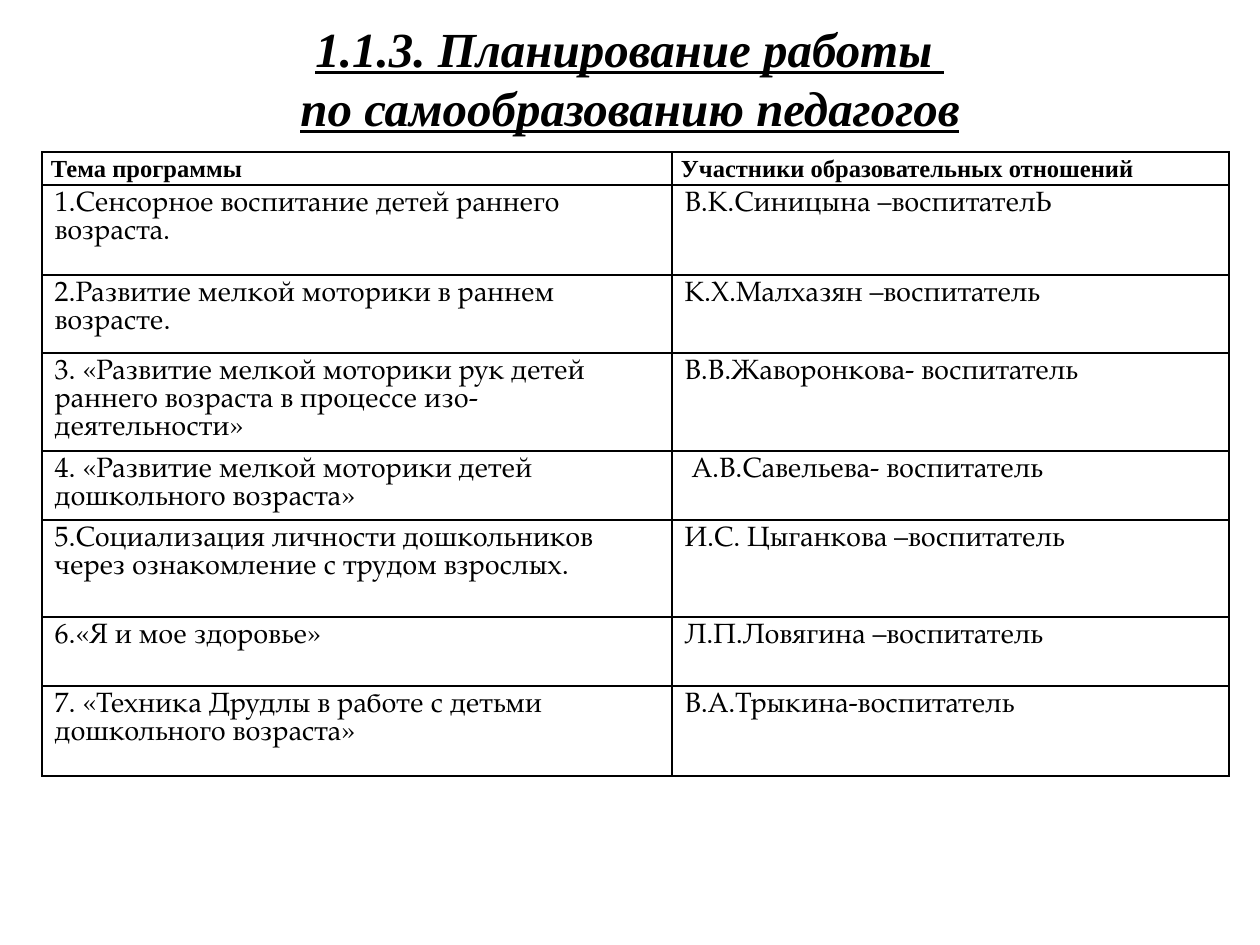
"""Build a slide listing the self-education topics of the teachers."""
from dataclasses import dataclass

import pptx
import pptx.dml.color
import pptx.enum.text
import pptx.oxml.ns
import pptx.oxml.xmlchemy
import pptx.util
from lxml import etree

PIXELS_PER_INCH = 126
BLACK = pptx.dml.color.RGBColor(0, 0, 0)
COLUMN_WIDTHS = (630, 557)
BORDER_TAGS = ("a:lnL", "a:lnR", "a:lnT", "a:lnB")

TITLE_FORMAT = {"name": "Times New Roman", "size": pptx.util.Pt(28),
                "bold": True, "italic": True, "underline": True}
HEADER_FORMAT = {"name": "Times New Roman", "size": pptx.util.Pt(14), "bold": True}
BODY_FORMAT = {"name": "TeX Gyre Pagella", "size": pptx.util.Pt(16), "bold": False}


@dataclass(frozen=True)
class Row:
    """One table row: its height in px and its two texts."""
    height: int
    topic: str
    participant: str


ROWS = (
    Row(33, "Тема программы", "Участники образовательных отношений"),
    Row(90, "1.Сенсорное воспитание детей раннего возраста.",
        "В.К.Синицына –воспитателЬ"),
    Row(78, "2.Развитие мелкой моторики в раннем возрасте.",
        "К.Х.Малхазян –воспитатель"),
    Row(98, "3. «Развитие мелкой моторики рук детей раннего возраста "
        "в процессе изо-деятельности»", "В.В.Жаворонкова- воспитатель"),
    Row(69, "4. «Развитие мелкой моторики детей дошкольного возраста»",
        " А.В.Савельева- воспитатель"),
    Row(97, "5.Социализация личности дошкольников через ознакомление "
        "с трудом взрослых.", "И.С. Цыганкова –воспитатель"),
    Row(69, "6.«Я и мое здоровье»", "Л.П.Ловягина –воспитатель"),
    Row(90, "7. «Техника Друдлы в работе с детьми дошкольного возраста»",
        "В.А.Трыкина-воспитатель"),
)


def px(length: int) -> int:
    """Turn px into EMU."""
    return pptx.util.Emu(round(length * 914400 / PIXELS_PER_INCH))


def format_runs(paragraph, values: dict) -> None:
    """Apply font values and black to every run."""
    for run in paragraph.runs:
        for name, value in values.items():
            setattr(run.font, name, value)
        run.font.color.rgb = BLACK


def add_borders(cell) -> None:
    """Draw a thin black line on each side of a cell."""
    qn = pptx.oxml.ns.qn
    properties = cell._tc.get_or_add_tcPr()
    for position, tag in enumerate(BORDER_TAGS):
        line = etree.Element(qn(tag), w=str(pptx.util.Pt(1)))
        fill = etree.SubElement(line, qn("a:solidFill"))
        etree.SubElement(fill, qn("a:srgbClr"), val=str(BLACK))
        properties.insert(position, line)


def fill_cell(cell, text: str, is_header: bool) -> None:
    """Write and format one table cell."""
    cell.text = text
    cell.fill.background()
    paragraph = cell.text_frame.paragraphs[0]
    format_runs(paragraph, HEADER_FORMAT if is_header else BODY_FORMAT)
    if is_header:
        paragraph.line_spacing = 1.15
        paragraph.space_after = pptx.util.Pt(10)
        margins = {"margin_left": px(9), "margin_right": px(9),
                   "margin_top": 0, "margin_bottom": 0}
        for name, value in margins.items():
            setattr(cell, name, value)
    add_borders(cell)


def add_title(slide) -> None:
    """Fill the title placeholder."""
    qn = pptx.oxml.ns.qn
    title = slide.shapes.title
    title.left, title.top, title.width, title.height = map(px, (63, 38, 1134, 78))
    frame = title.text_frame
    frame.text = "1.1.3. Планирование работы \vпо самообразованию педагогов"
    frame.auto_size = pptx.enum.text.MSO_AUTO_SIZE.NONE
    frame.vertical_anchor = pptx.enum.text.MSO_ANCHOR.MIDDLE
    paragraph = frame.paragraphs[0]
    paragraph.alignment = pptx.enum.text.PP_ALIGN.CENTER
    format_runs(paragraph, TITLE_FORMAT)
    line_break = paragraph._p.find(qn("a:br"))
    etree.SubElement(line_break, qn("a:rPr"), sz="2800")


def add_topics(slide) -> None:
    """Add the table of topics and participants."""
    frame = slide.shapes.add_table(
        len(ROWS), len(COLUMN_WIDTHS), px(42), px(152),
        px(sum(COLUMN_WIDTHS)), px(sum(row.height for row in ROWS)))
    table = frame.table
    table.first_row = table.horz_banding = False
    for column, width in zip(table.columns, COLUMN_WIDTHS):
        column.width = px(width)
    for index, row in enumerate(ROWS):
        table.rows[index].height = px(row.height)
        for column, text in enumerate((row.topic, row.participant)):
            fill_cell(table.cell(index, column), text, index == 0)


def main() -> None:
    """Build and save the presentation."""
    presentation = pptx.Presentation()
    presentation.slide_width = px(1260)
    presentation.slide_height = px(945)
    slide = presentation.slides.add_slide(presentation.slide_layouts[5])
    add_title(slide)
    add_topics(slide)
    presentation.save("out.pptx")


if __name__ == "__main__":
    main()
